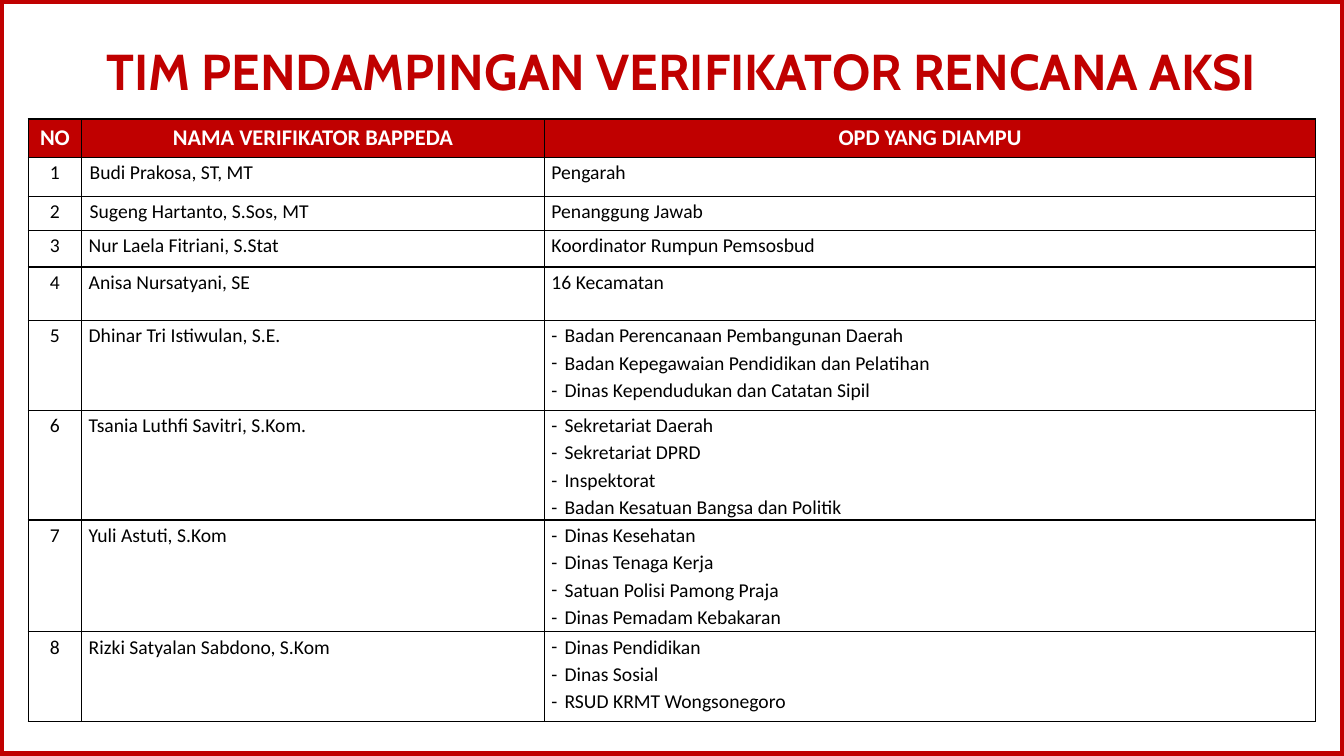
from lxml import etree
from pptx import Presentation
from pptx.dml.color import RGBColor
from pptx.enum.shapes import MSO_SHAPE
from pptx.enum.text import MSO_ANCHOR, PP_ALIGN
from pptx.oxml.ns import qn
from pptx.util import Inches, Pt

RECTANGLE = MSO_SHAPE.RECTANGLE
MIDDLE, TOP = MSO_ANCHOR.MIDDLE, MSO_ANCHOR.TOP
CENTER, LEFT = PP_ALIGN.CENTER, PP_ALIGN.LEFT
RED, BLACK, WHITE = "C00000", "000000", "FFFFFF"
TITLE_ONLY = 5

HEADINGS = ["NO", "NAMA VERIFIKATOR BAPPEDA", "OPD YANG DIAMPU"]
# A plain string is a role, a list holds the offices supervised.
VERIFIERS = [
    ("Budi Prakosa, ST, MT", "Pengarah"),
    ("Sugeng Hartanto, S.Sos, MT", "Penanggung Jawab"),
    ("Nur Laela Fitriani, S.Stat", "Koordinator Rumpun Pemsosbud"),
    ("Anisa Nursatyani, SE", "16 Kecamatan"),
    ("Dhinar Tri Istiwulan, S.E.", [
        "Badan Perencanaan Pembangunan Daerah",
        "Badan Kepegawaian Pendidikan dan Pelatihan",
        "Dinas Kependudukan dan Catatan Sipil"]),
    ("Tsania Luthfi Savitri, S.Kom.", [
        "Sekretariat Daerah", "Sekretariat DPRD", "Inspektorat",
        "Badan Kesatuan Bangsa dan Politik"]),
    ("Yuli Astuti, S.Kom", [
        "Dinas Kesehatan", "Dinas Tenaga Kerja",
        "Satuan Polisi Pamong Praja", "Dinas Pemadam Kebakaran"]),
    ("Rizki Satyalan Sabdono, S.Kom", [
        "Dinas Pendidikan", "Dinas Sosial", "RSUD KRMT Wongsonegoro"]),
]
COLUMN_WIDTHS = [0.53, 4.59, 7.65]
ROW_HEIGHTS = [0.38, 0.39, 0.34, 0.36, 0.53, 0.89, 1.09, 1.11, 0.89]


def rgb(color):
    return RGBColor.from_string(color)


def add_run(paragraph, text, font_name, size, color, bold=False):
    run = paragraph.add_run()
    run.text = text
    run.font.name = font_name
    run.font.size = Pt(size)
    run.font.bold = bold
    run.font.color.rgb = rgb(color)


prs = Presentation()
prs.slide_width, prs.slide_height = Inches(13.33), Inches(7.5)
slide = prs.slides.add_slide(prs.slide_layouts[TITLE_ONLY])
slide.background.fill.solid()
slide.background.fill.fore_color.rgb = rgb(WHITE)

# Title
title = slide.shapes.title
title.left, title.top = Inches(0.71), Inches(0)
title.width, title.height = Inches(12.09), Inches(1.39)
title_frame = title.text_frame
title_frame.word_wrap = True
title_frame.vertical_anchor = MIDDLE
title_frame.margin_left = title_frame.margin_right = Inches(0.12)
title_frame.margin_top = title_frame.margin_bottom = Inches(0.06)
title_line = title_frame.paragraphs[0]
title_line.alignment = CENTER
add_run(title_line, "TIM PENDAMPINGAN VERIFIKATOR RENCANA AKSI", "Cabin", 36, RED, True)

# Red frame around the slide, behind the title
frame = slide.shapes.add_shape(RECTANGLE, 0, 0, Inches(13.33), Inches(7.49))
frame.shadow.inherit = False
frame.fill.background()
frame.line.color.rgb = rgb(RED)
frame.line.width = Pt(6)
title.element.addprevious(frame.element)

# Table of verifiers
rows = [HEADINGS]
for number, (verifier, offices) in enumerate(VERIFIERS, 1):
    rows.append([str(number), verifier, offices])

table = slide.shapes.add_table(
    len(rows), len(HEADINGS), Inches(0.28), Inches(1.18),
    Inches(sum(COLUMN_WIDTHS)), Inches(sum(ROW_HEIGHTS))).table
table.horz_banding = False
for column, width in zip(table.columns, COLUMN_WIDTHS):
    column.width = Inches(width)
for row, height in zip(table.rows, ROW_HEIGHTS):
    row.height = Inches(height)

for r, row in enumerate(rows):
    is_heading = r == 0
    for c, content in enumerate(row):
        cell = table.cell(r, c)
        cell.vertical_anchor = TOP
        if is_heading:
            cell.fill.solid()
            cell.fill.fore_color.rgb = rgb(RED)
        else:
            cell.fill.background()
            cell.margin_left = cell.margin_right = Inches(0.07)
            cell.margin_top = cell.margin_bottom = 0

        cell_properties = cell._tc.get_or_add_tcPr()
        for position, side in enumerate(("lnL", "lnR", "lnT", "lnB")):
            border = etree.Element(qn(f"a:{side}"), w=str(Pt(1)))
            border_fill = etree.SubElement(border, qn("a:solidFill"))
            etree.SubElement(border_fill, qn("a:srgbClr"), val=BLACK)
            cell_properties.insert(position, border)

        is_list = isinstance(content, list)
        for i, text in enumerate(content if is_list else [content]):
            paragraphs = cell.text_frame
            paragraph = paragraphs.paragraphs[0] if i == 0 else paragraphs.add_paragraph()
            paragraph.alignment = CENTER if is_heading or c == 0 else LEFT
            if is_heading:
                add_run(paragraph, text, "Calibri", 16, WHITE, True)
                continue
            paragraph.line_spacing = 1.15
            properties = paragraph._p.get_or_add_pPr()
            if is_list:
                properties.set("marL", str(Inches(0.13)))
                properties.set("indent", str(-Inches(0.13)))
                bullet_color = etree.SubElement(properties, qn("a:buClr"))
                etree.SubElement(bullet_color, qn("a:srgbClr"), val=BLACK)
                etree.SubElement(properties, qn("a:buFont"), typeface="Calibri")
                etree.SubElement(properties, qn("a:buChar"), char="-")
            elif c == 1 and r <= 2:
                properties.set("indent", str(Inches(0.01)))
            add_run(paragraph, text, "Calibri", 14, BLACK)

prs.save("out.pptx")
